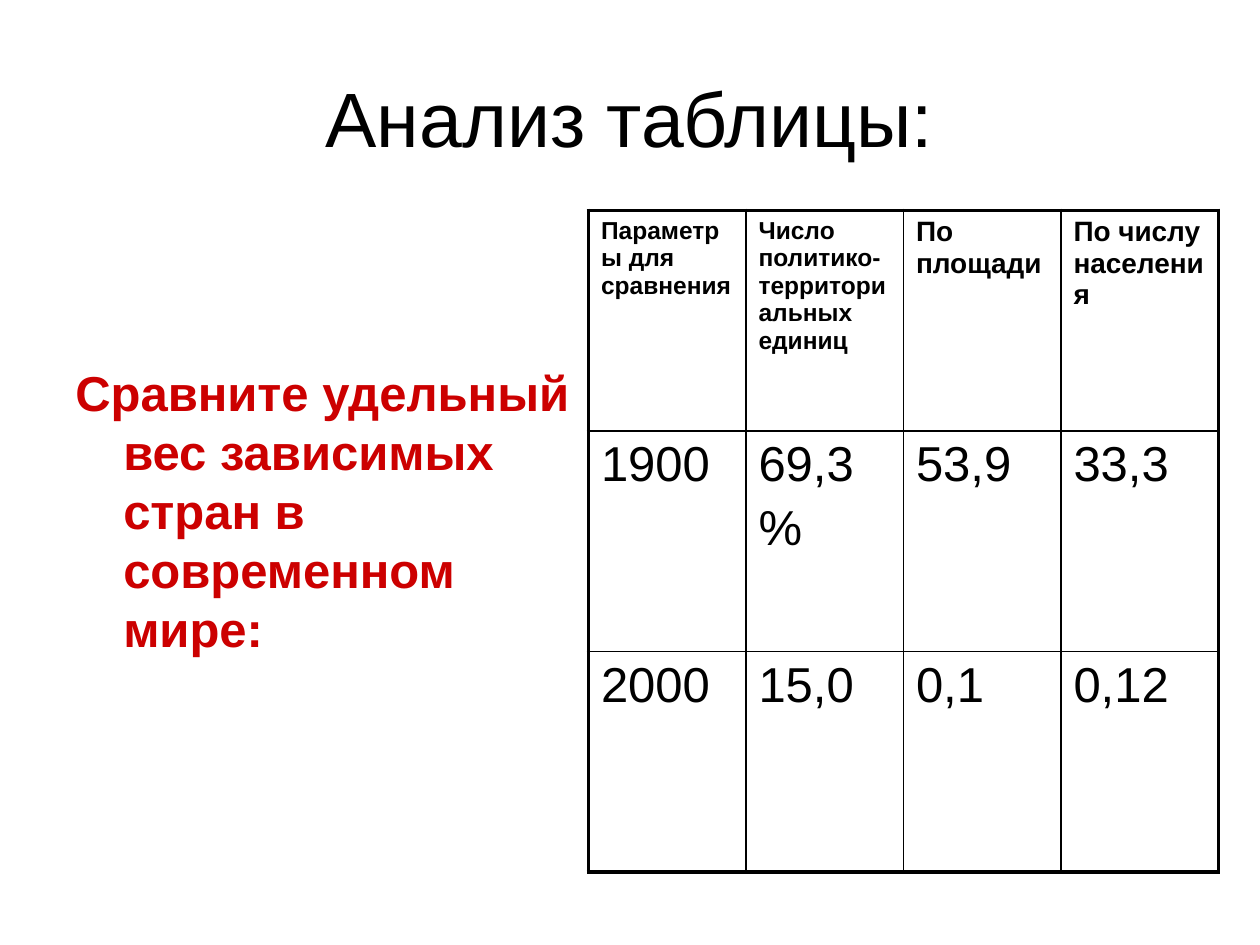
from pptx import Presentation
from pptx.dml.color import RGBColor
from pptx.enum.text import MSO_ANCHOR, PP_ALIGN
from pptx.oxml.ns import qn
from pptx.util import Inches, Pt
from lxml import etree

CENTER = PP_ALIGN.CENTER
MIDDLE = MSO_ANCHOR.MIDDLE

FONT = "Arial"
BLACK = "000000"
RED = "CC0000"
TITLE = "Анализ таблицы:"
TASK = "Сравните удельный вес зависимых стран в современном мире:"
ROWS = [
    ["Параметры для сравнения", "Число политико-территориальных единиц",
     "По площади", "По числу населения"],
    ["1900", "69,3\n%", "53,9", "33,3"],
    ["2000", "15,0", "0,1", "0,12"],
]
HEADER_SIZES = [14, 14, 16, 16]
BODY_SIZE = 28
COLUMN_WIDTH = 1.25
ROW_HEIGHT = 1.75
OUTER_LINE = 2.25
INNER_LINE = 1


def color(value):
    return RGBColor.from_string(value)


def write(text_frame, text, size, hex_color=BLACK, bold=False):
    text_frame.text = text
    for index, paragraph in enumerate(text_frame.paragraphs):
        if index:
            paragraph.space_before = Pt(size * 0.2)
        for run in paragraph.runs:
            run.font.name = FONT
            run.font.size = Pt(size)
            run.font.bold = bold
            run.font.color.rgb = color(hex_color)


def add_text(slide, box, text, size, hex_color=BLACK, bold=False):
    shape = slide.shapes.add_textbox(*map(Inches, box))
    shape.text_frame.word_wrap = True
    write(shape.text_frame, text, size, hex_color, bold)
    return shape.text_frame


def set_borders(cell, widths):
    properties = cell._tc.get_or_add_tcPr()
    for index, (side, width) in enumerate(widths.items()):
        line = etree.Element(qn(f"a:ln{side}"), w=str(Pt(width)))
        fill = etree.SubElement(line, qn("a:solidFill"))
        etree.SubElement(fill, qn("a:srgbClr"), val=BLACK)
        properties.insert(index, line)


def add_comparison_table(slide):
    row_count, column_count = len(ROWS), len(ROWS[0])
    table = slide.shapes.add_table(
        row_count, column_count, Inches(4.67), Inches(1.67),
        Inches(COLUMN_WIDTH * column_count), Inches(ROW_HEIGHT * row_count)).table
    table.first_row = False
    table.horz_banding = False
    for row_index, row in enumerate(ROWS):
        for column_index, text in enumerate(row):
            cell = table.cell(row_index, column_index)
            header = row_index == 0
            size = HEADER_SIZES[column_index] if header else BODY_SIZE
            write(cell.text_frame, text, size, bold=header)
            cell.fill.background()
            edges = {
                "L": column_index == 0,
                "R": column_index == column_count - 1,
                "T": header,
                "B": row_index == row_count - 1,
            }
            set_borders(cell, {side: OUTER_LINE if outer else INNER_LINE
                               for side, outer in edges.items()})


def main():
    presentation = Presentation()
    presentation.slide_width = Inches(10)
    presentation.slide_height = Inches(7.5)
    slide = presentation.slides.add_slide(presentation.slide_layouts[6])

    title = add_text(slide, (0.5, 0.3, 9, 1.25), TITLE, 44)
    title.vertical_anchor = MIDDLE
    title.paragraphs[0].alignment = CENTER

    task = add_text(slide, (0.5, 1.75, 4.42, 4.95), TASK, BODY_SIZE, RED, True)
    task.margin_top = Inches(1.13)
    indent = task.paragraphs[0]._p.get_or_add_pPr()
    indent.set("marL", str(Inches(0.38)))
    indent.set("indent", str(Inches(-0.38)))

    add_comparison_table(slide)
    presentation.save("out.pptx")


if __name__ == "__main__":
    main()
